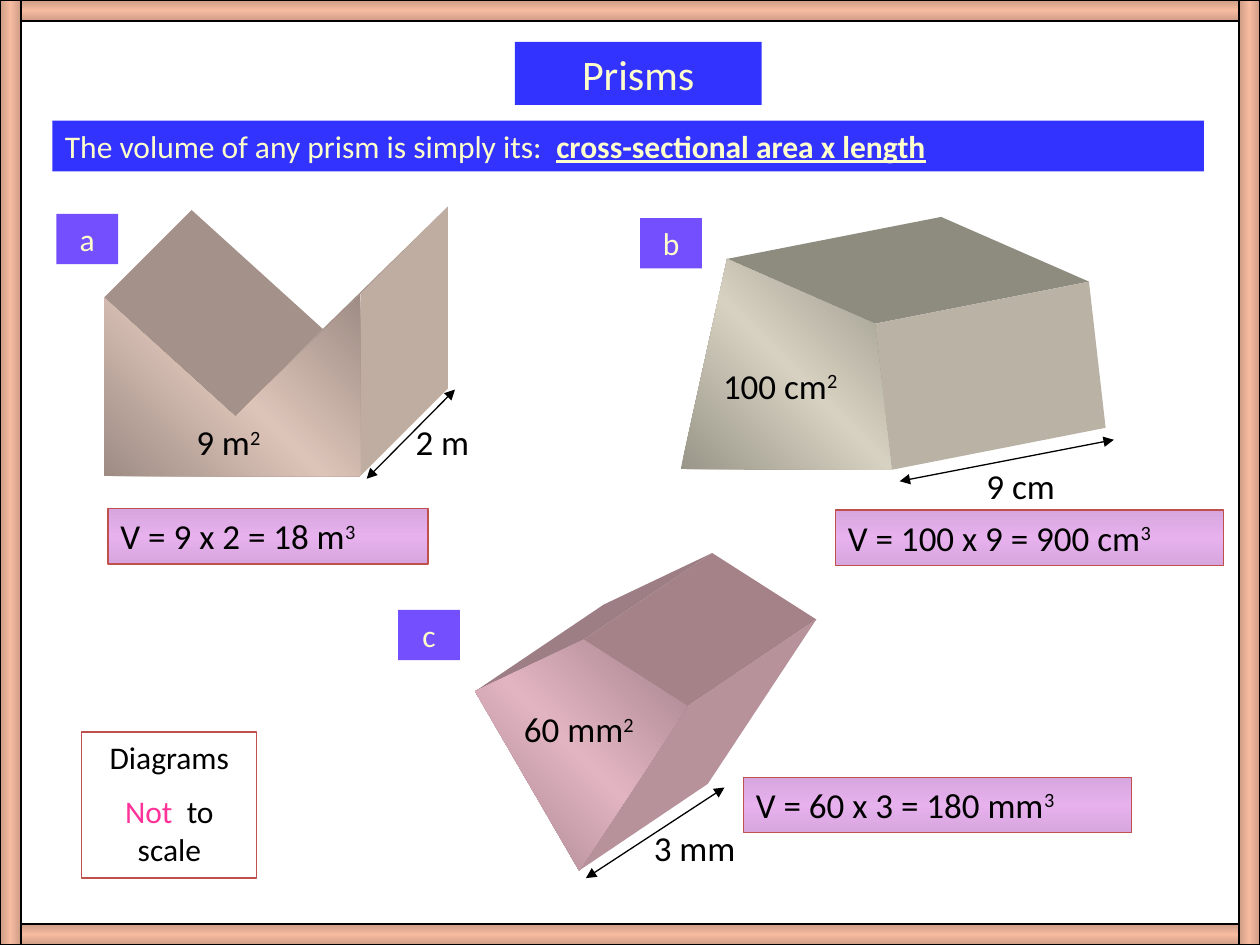
from dataclasses import dataclass
from typing import Optional

from lxml.etree import SubElement
from pptx import Presentation
from pptx.dml.color import RGBColor
from pptx.enum.shapes import MSO_CONNECTOR as Connector, MSO_SHAPE as Preset
from pptx.enum.text import MSO_ANCHOR as Anchor, PP_ALIGN as Align
from pptx.oxml.ns import qn
from pptx.util import Pt

Point = tuple[float, float]


@dataclass(frozen=True)
class Theme:
    font: str = "Calibri"
    title: int = 24
    formula: int = 20
    body: int = 18
    line: float = 0.75
    blue: str = "3333FF"
    badge: str = "744FFD"
    cream: str = "FFFFCC"
    black: str = "000000"
    pink: str = "FF3399"
    border: str = "C0504D"
    frame: tuple[str, str] = ("CE9C86", "F6BBA0")
    lilac: tuple[str, str] = ("D8A6DE", "E6B1ED")


THEME = Theme()


@dataclass(frozen=True)
class Span:
    text: str
    color: str = THEME.black
    size: int = THEME.formula
    bold: Optional[bool] = None
    underline: Optional[bool] = None
    raised: bool = False


@dataclass(frozen=True)
class Area:
    left: float
    top: float
    width: float
    height: float

    def lengths(self) -> list[int]:
        return [Pt(value) for value in (self.left, self.top, self.width, self.height)]


@dataclass(frozen=True)
class Prism:
    front: list[Point]
    depth: Point                            # offset from the front to the back
    sides: list[tuple[int, int, str]]       # front edge and the colour of its face
    shades: tuple[str, str]
    letter: str
    badge: Point
    area: tuple[str, Area]
    arrow: tuple[Point, Point]
    length: tuple[str, Area]
    volume: tuple[str, Area]


PRISMS = [
    Prism([(59.5, 170), (59.5, 272), (206, 272), (206, 168), (134.5, 238)], (50, -50),
          [(3, 4, "A4928A"), (4, 0, "A4928A"), (2, 3, "C0ADA2")], ("9E8C84", "DDC4B9"),
          "a", (32.2, 122.2), ("9 m", Area(105.1, 236.9, 99.4, 31)),
          ((209.5, 273.6), (260, 222.6)), ("2 m", Area(230.4, 236.9, 67, 31)),
          ("V = 9 x 2 = 18 m", Area(61.8, 290.6, 182.9, 31.7))),
    Prism([(389, 268), (509.5, 268.5), (500, 185), (415.5, 148)], (122.3, -24),
          [(2, 3, "8E8B7F"), (1, 2, "BAB3A5")], ("999689", "D6D1C0"),
          "b", (365.8, 124.6), ("100 cm", Area(406.1, 204.5, 110.9, 31)),
          ((514.1, 275), (636.5, 251.3)), ("9 cm", Area(556.6, 262.1, 67, 31)),
          ("V = 100 x 9 = 900 cm", Area(477.4, 291.4, 221.8, 31.7))),
    Prism([(271.5, 395), (331, 497.5), (393, 403.5), (333.5, 365.5)], (73.5, -49.5),
          [(3, 0, "9E7E85"), (2, 3, "A48288"), (1, 2, "B8929B")], ("A2818A", "E2B4C1"),
          "c", (227.5, 348.5), ("60 mm", Area(292.3, 401, 99.4, 31)),
          ((334.8, 501.8), (414, 450)), ("3 mm", Area(366.5, 468.7, 80.6, 31)),
          ("V = 60 x 3 = 180 mm", Area(424.8, 444.2, 221.8, 31.7))),
]


def paint(shape, color: Optional[str], line: Optional[str] = None) -> None:
    shape.shadow.inherit = False
    if color:
        shape.fill.solid()
        shape.fill.fore_color.rgb = RGBColor.from_string(color)
    else:
        shape.fill.background()
    if line:
        shape.line.color.rgb = RGBColor.from_string(line)
        shape.line.width = Pt(THEME.line)
    else:
        shape.line.fill.background()


def shade(shape, shades: tuple[str, str], angle: int) -> None:
    """Replace the solid fill by a dark-light-dark gradient."""
    solid = shape.element.spPr.find(qn("a:solidFill"))
    gradient = solid.makeelement(qn("a:gradFill"), {"rotWithShape": "1"})
    stops = SubElement(gradient, qn("a:gsLst"))
    dark, light = shades
    for position, color in ((0, dark), (50, light), (100, dark)):
        stop = SubElement(stops, qn("a:gs"), pos=str(position * 1000))
        SubElement(stop, qn("a:srgbClr"), val=color)
    SubElement(gradient, qn("a:lin"), ang=str(angle * 60000), scaled="0")
    solid.getparent().replace(solid, gradient)


def write(box, paragraphs: list[list[Span]], align: Align = Align.LEFT) -> None:
    frame = box.text_frame
    for name, value in {"word_wrap": True, "vertical_anchor": Anchor.TOP}.items():
        setattr(frame, name, value)
    for index, spans in enumerate(paragraphs):
        para = frame.add_paragraph() if index else frame.paragraphs[0]
        para.alignment = align
        if index:
            para.space_before = Pt(spans[0].size / 2)
        for span in spans:
            run = para.add_run()
            run.text = span.text
            formats = {"name": THEME.font, "size": Pt(span.size),
                       "bold": span.bold, "underline": span.underline}
            for name, value in formats.items():
                setattr(run.font, name, value)
            run.font.color.rgb = RGBColor.from_string(span.color)
            if span.raised:
                run.font._element.set("baseline", "30000")


def add_box(page, area: Area, color: Optional[str], line: Optional[str] = None):
    box = page.shapes.add_shape(Preset.RECTANGLE, *area.lengths())
    paint(box, color, line)
    return box


def add_label(page, area: Area, spans: list[Span]) -> None:
    write(page.shapes.add_textbox(*area.lengths()), [spans])


def add_face(page, points: list[Point], color: str):
    start, *others = [(Pt(x), Pt(y)) for x, y in points]
    builder = page.shapes.build_freeform(*start)
    builder.add_line_segments(others, close=True)
    face = builder.convert_to_shape()
    paint(face, color)
    return face


def add_arrow(page, start: Point, end: Point) -> None:
    arrow = page.shapes.add_connector(
        Connector.STRAIGHT, *[Pt(value) for value in (*start, *end)])
    arrow.line.color.rgb = RGBColor.from_string(THEME.black)
    arrow.line.width = Pt(THEME.line)
    outline = arrow.line._get_or_add_ln()
    for tag in ("a:headEnd", "a:tailEnd"):
        SubElement(outline, qn(tag), type="triangle")
    SubElement(arrow._element.spPr, qn("a:effectLst"))


def draw_prism(page, prism: Prism) -> None:
    # Side faces sweep a front edge along the depth
    back = [(x + prism.depth[0], y + prism.depth[1]) for x, y in prism.front]
    for first, second, color in prism.sides:
        add_face(page, [prism.front[first], prism.front[second],
                        back[second], back[first]], color)
    shade(add_face(page, prism.front, prism.shades[1]), prism.shades, 315)

    # Measurements, letter and result
    text, area = prism.area
    add_label(page, area, [Span(text), Span("2", raised=True)])
    add_arrow(page, *prism.arrow)
    text, area = prism.length
    add_label(page, area, [Span(text)])
    badge = add_box(page, Area(*prism.badge, 35.3, 28.8), THEME.badge)
    write(badge, [[Span(prism.letter, THEME.cream, THEME.body)]], Align.CENTER)
    text, area = prism.volume
    result = add_box(page, area, THEME.lilac[1], THEME.border)
    shade(result, THEME.lilac, 90)
    write(result, [[Span(text), Span("3", raised=True)]])


def main() -> None:
    deck = Presentation()
    deck.slide_width, deck.slide_height = Pt(720), Pt(540)
    page = deck.slides.add_slide(deck.slide_layouts[6])

    # Frame around the page
    bars = [(Area(0, 528, 720, 12), 90), (Area(0, 0, 720, 12), 90),
            (Area(708, 0, 12, 540), 0), (Area(0, 0, 12, 540), 0)]
    for area, angle in bars:
        shade(add_box(page, area, THEME.frame[1], THEME.black), THEME.frame, angle)

    # Title and rule
    title = add_box(page, Area(294.2, 24, 141, 36), THEME.blue)
    write(title, [[Span("Prisms", THEME.cream, THEME.title)]], Align.CENTER)
    rule = add_box(page, Area(30, 69, 658, 29), THEME.blue)
    write(rule, [[
        Span("The volume of any prism is simply its:  ", THEME.cream, THEME.body),
        Span("cross-sectional area x length", THEME.cream, THEME.body, True, True)]])

    for prism in PRISMS:
        draw_prism(page, prism)

    # Scale note
    note = add_box(page, Area(46.8, 418.3, 100, 83.5), None, THEME.border)
    write(note, [[Span("Diagrams", size=THEME.body)],
                 [Span("Not", THEME.pink, THEME.body),
                  Span("  to scale", size=THEME.body)]], Align.CENTER)

    deck.save("out.pptx")


if __name__ == "__main__":
    main()
